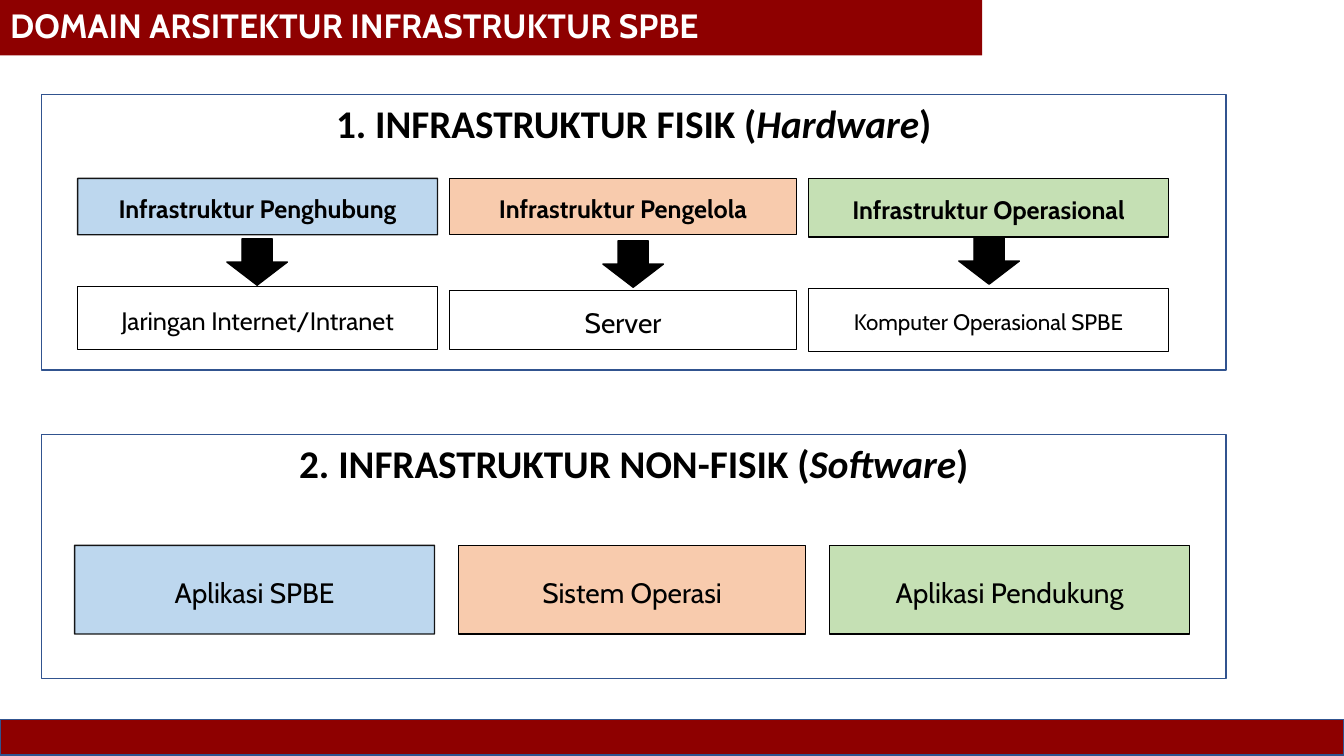
"""Builds the slide on the physical and non-physical infrastructure domains."""
import dataclasses

import lxml.etree
import pptx
import pptx.dml.color
import pptx.enum.shapes
import pptx.enum.text
import pptx.oxml.ns
import pptx.util

SHAPES = pptx.enum.shapes.MSO_SHAPE
ANCHOR = pptx.enum.text.MSO_ANCHOR
ALIGN = pptx.enum.text.PP_ALIGN


@dataclasses.dataclass(frozen=True)
class Theme:
    red: str = "8E0000"
    navy: str = "31538F"
    black: str = "000000"
    white: str = "FFFFFF"
    blue: str = "BDD7EE"
    orange: str = "F8CBAD"
    green: str = "C5E0B4"
    font: str = "Cabin"
    panel_font: str = "Calibri"
    title_size: int = 24
    panel_size: int = 28
    large_size: int = 20
    medium_size: int = 18
    small_size: int = 16


@dataclasses.dataclass(frozen=True)
class Area:
    column: float
    row: float
    columns: float
    rows: float


@dataclasses.dataclass(frozen=True)
class Box:
    text: str
    row: float
    rows: float
    fill: str
    size: int
    bold: bool = False
    line_opacity: int = 100


@dataclasses.dataclass(frozen=True)
class Panel:
    heading: str
    area: Area
    first_column: float
    gap: float
    box_rows: tuple[tuple[Box, ...], ...]
    arrow_centres: tuple[tuple[float, float], ...] = ()


THEME = Theme()
GRID_COLUMNS, GRID_ROWS = 133.3, 75
CELL = pptx.util.Inches(0.1)
BOX_COLUMNS = (35.7, 34.4, 35.7)
ARROW_LENGTH, ARROW_BREADTH = 4.6, 6
TITLE_AREA = Area(0, -0.5, 97.4, 6)
FOOTER_AREA = Area(0, 71.4, GRID_COLUMNS, 3.5)

PANELS = (
    Panel("2. INFRASTRUKTUR NON-FISIK (*Software*)", Area(4.1, 43.1, 117.5, 24.2), 7.4, 2.4, ((
        Box("Aplikasi SPBE", 54.1, 8.8, THEME.blue, THEME.large_size, line_opacity=91),
        Box("Sistem Operasi", 54.1, 8.8, THEME.orange, THEME.large_size),
        Box("Aplikasi Pendukung", 54.1, 8.8, THEME.green, THEME.large_size),
    ),)),
    Panel("1. INFRASTRUKTUR FISIK (*Hardware*)", Area(4.1, 9.4, 117.5, 27.3), 7.7, 1.2, ((
        Box("Infrastruktur Penghubung", 17.7, 5.6, THEME.blue, THEME.medium_size, True, 91),
        Box("Infrastruktur Pengelola", 17.7, 5.6, THEME.orange, THEME.medium_size, True),
        Box("Infrastruktur Operasional", 17.7, 5.8, THEME.green, THEME.medium_size, True),
    ), (
        Box("Jaringan Internet/Intranet", 28.4, 6.3, THEME.white, THEME.medium_size),
        Box("Server", 28.8, 5.9, THEME.white, THEME.large_size),
        Box("Komputer Operasional SPBE", 28.6, 6.3, THEME.white, THEME.small_size),
    )), ((25.5, 26), (62.8, 26.2), (98.1, 25.9))),
)


def cells(count: float) -> int:
    """Converts grid cells to slide units."""
    return round(count * CELL)


def colour(value: str) -> pptx.dml.color.RGBColor:
    """Converts a theme colour to a colour object."""
    return pptx.dml.color.RGBColor.from_string(value)


def place(shape, area: Area) -> None:
    """Moves a shape to an area of the grid."""
    shape.left, shape.top = cells(area.column), cells(area.row)
    shape.width, shape.height = cells(area.columns), cells(area.rows)


def paint(shape, fill: str, line: str | None, line_opacity: int = 100) -> None:
    """Sets a shape's fill and outline."""
    shape.fill.solid()
    shape.fill.fore_color.rgb = colour(fill)
    if line is None:
        shape.line.fill.background()
        return
    shape.line.width = pptx.util.Pt(1)
    shape.line.color.rgb = colour(line)
    if line_opacity < 100:
        outline = shape.element.spPr.find(pptx.oxml.ns.qn("a:ln"))
        line_colour = outline.find(f".//{pptx.oxml.ns.qn('a:srgbClr')}")
        alpha = lxml.etree.SubElement(line_colour, pptx.oxml.ns.qn("a:alpha"))
        alpha.set("val", str(line_opacity * 1000))


def draw_shape(shapes, kind: SHAPES, area: Area, fill: str, line: str, line_opacity: int = 100):
    """Adds a flat preset shape."""
    shape = shapes.add_shape(kind, cells(area.column), cells(area.row),
                             cells(area.columns), cells(area.rows))
    shape.shadow.inherit = False
    paint(shape, fill, line, line_opacity)
    return shape


def write_text(shape, text: str, *, size: int, font: str = THEME.font, ink: str = THEME.black,
               bold: bool = False, align: ALIGN = ALIGN.CENTER, anchor: ANCHOR = ANCHOR.MIDDLE,
               spacing: float = 1.0) -> None:
    """Writes one paragraph, with the words between asterisks in italics."""
    frame = shape.text_frame
    frame.word_wrap = True
    frame.auto_size = pptx.enum.text.MSO_AUTO_SIZE.NONE
    frame.vertical_anchor = anchor
    frame.margin_left = frame.margin_right = cells(1)
    frame.margin_top = frame.margin_bottom = cells(0.5)
    paragraph = frame.paragraphs[0]
    paragraph.alignment = align
    paragraph.line_spacing = spacing
    for index, part in enumerate(text.split("*")):
        run = paragraph.add_run()
        run.text = part
        run.font.name = font
        run.font.size = pptx.util.Pt(size)
        run.font.bold = bold
        run.font.italic = index % 2 == 1
        run.font.color.rgb = colour(ink)


def draw_panel(slide, panel: Panel) -> None:
    """Draws a panel with its heading, boxes and arrows as one group."""
    shapes = slide.shapes.add_group_shape().shapes
    frame = draw_shape(shapes, SHAPES.RECTANGLE, panel.area, THEME.white, THEME.navy)
    write_text(frame, panel.heading, size=THEME.panel_size, font=THEME.panel_font,
               bold=True, anchor=ANCHOR.TOP)
    for boxes in panel.box_rows:
        column = panel.first_column
        for box, columns in zip(boxes, BOX_COLUMNS):
            shape = draw_shape(shapes, SHAPES.RECTANGLE, Area(column, box.row, columns, box.rows),
                               box.fill, THEME.black, box.line_opacity)
            write_text(shape, box.text, size=box.size, bold=box.bold, spacing=1.13)
            column += columns + panel.gap
    for column, row in panel.arrow_centres:
        area = Area(column - ARROW_LENGTH / 2, row - ARROW_BREADTH / 2,
                    ARROW_LENGTH, ARROW_BREADTH)
        draw_shape(shapes, SHAPES.RIGHT_ARROW, area, THEME.black, THEME.black).rotation = 90


def main() -> None:
    """Builds and saves the presentation."""
    presentation = pptx.Presentation()
    presentation.slide_width = cells(GRID_COLUMNS)
    presentation.slide_height = cells(GRID_ROWS)
    slide = presentation.slides.add_slide(presentation.slide_layouts[5])
    draw_shape(slide.shapes, SHAPES.RECTANGLE, FOOTER_AREA, THEME.red, THEME.navy)
    title = slide.shapes.title
    place(title, TITLE_AREA)
    paint(title, THEME.red, None)
    write_text(title, "DOMAIN ARSITEKTUR INFRASTRUKTUR SPBE", size=THEME.title_size,
               ink=THEME.white, bold=True, align=ALIGN.LEFT)
    for panel in PANELS:
        draw_panel(slide, panel)
    presentation.save("out.pptx")


if __name__ == "__main__":
    main()
